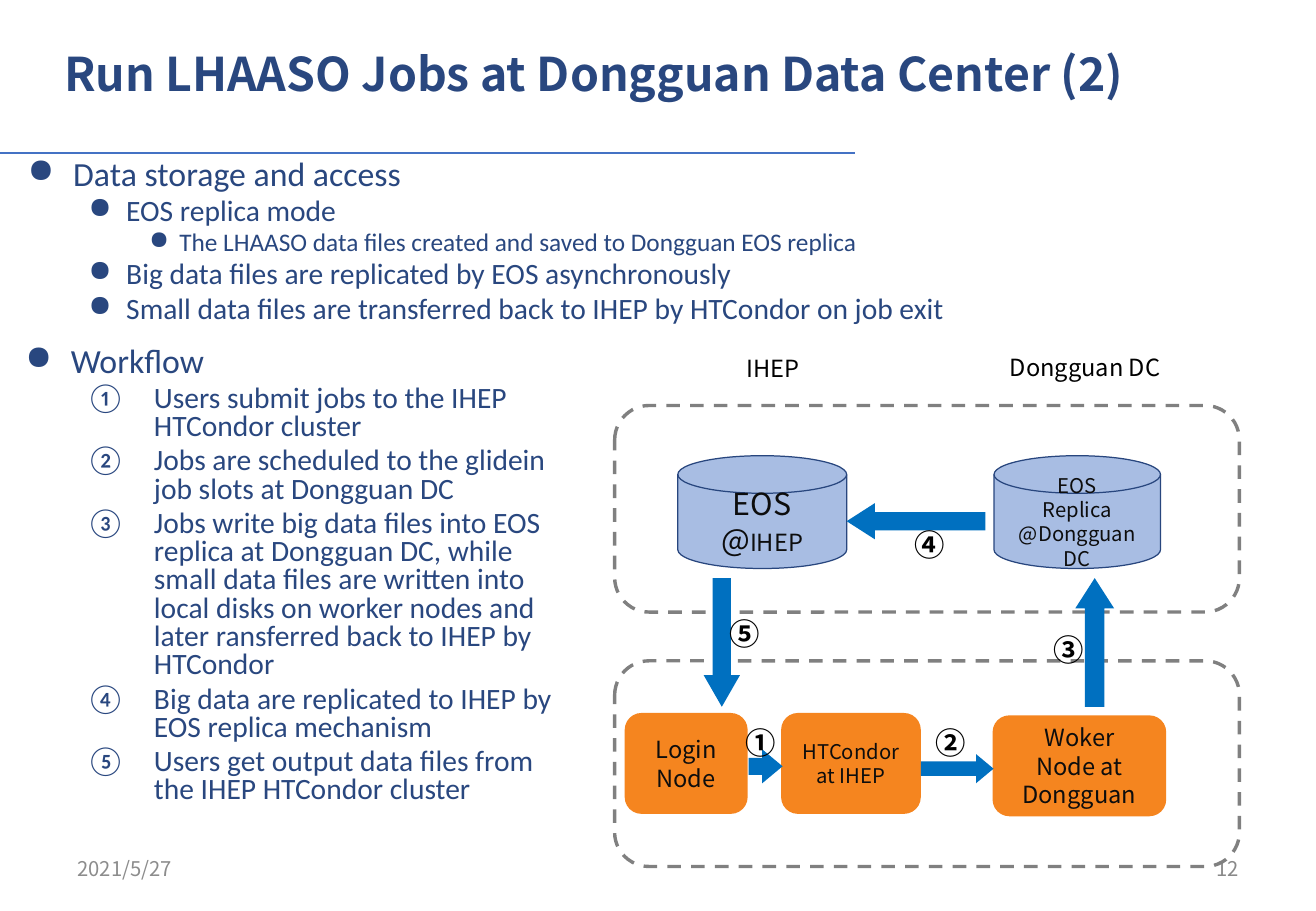
from dataclasses import dataclass

from lxml.etree import SubElement
from pptx import Presentation
from pptx.dml.color import RGBColor
from pptx.enum.dml import MSO_LINE
from pptx.enum.shapes import MSO_CONNECTOR, MSO_SHAPE
from pptx.enum.text import MSO_ANCHOR, PP_ALIGN
from pptx.oxml.ns import qn
from pptx.util import Cm, Pt


@dataclass(frozen=True)
class Theme:
    navy: str = "29477F"
    rule: str = "4472C4"
    dash: str = "808080"
    disk: str = "A8BDE3"
    disk_edge: str = "28467E"
    node: str = "F5851F"
    arrow: str = "0070C0"
    ink: str = "0D0D0D"
    black: str = "000000"
    date: str = "8C8C8C"
    number: str = "898989"
    title_font: str = "Noto Sans CJK KR"
    body_font: str = "Calibri"
    label_font: str = "Noto Sans CJK SC"
    title_size: float = 27.5
    level_sizes: tuple = (20, 17.5, 15)
    large: float = 18
    medium: float = 14
    small: float = 12


THEME = Theme()
SLIDE_SIZE = (27.51, 19.05)

# All boxes are (left, top, width, height) in centimetres.
TITLE = "Run LHAASO Jobs at Dongguan Data Center (2)"
TITLE_BOX = (1.09, 0.81, 23.29, 1.8)
RULE_Y, RULE_END = 3.2, 17.88

# Outline items: (level, text)
STORAGE_BOX = (0.33, 3.23, 27.1, 3.91)
STORAGE = [
    (0, "Data storage and access"),
    (1, "EOS replica mode"),
    (2, "The LHAASO data files created and saved to Dongguan EOS replica"),
    (1, "Big data files are replicated by EOS asynchronously"),
    (1, "Small data files are transferred back to IHEP by HTCondor on job exit"),
]
STORAGE_INDENTS = [(0.95, 0.95), (2.06, 0.79), (3.17, 0.63)]

WORKFLOW_BOX = (0.28, 7.14, 11.71, 10.64)
WORKFLOW = [
    (0, "Workflow"),
    (1, "Users submit jobs to the IHEP HTCondor cluster"),
    (1, "Jobs are scheduled to the glidein job slots at Dongguan DC"),
    (1, "Jobs write big data files into EOS replica at Dongguan DC, while small data files "
        "are written into local disks on worker nodes and later ransferred back to IHEP by HTCondor"),
    (1, "Big data are replicated to IHEP by EOS replica mechanism"),
    (1, "Users get output data files from the IHEP HTCondor cluster"),
]
WORKFLOW_INDENTS = [(0.95, 0.95), (2.69, 1.42)]

FOOTERS = [
    ("2021/5/27", 1.37, PP_ALIGN.LEFT, THEME.date),
    ("12", 19.71, PP_ALIGN.RIGHT, THEME.number),
]
FOOTER_TOP, FOOTER_WIDTH, FOOTER_HEIGHT = 17.65, 6.43, 1.02

FRAMES = [(12.85, 8.48, 13.06, 4.32), (12.85, 13.82, 13.06, 4.3)]
SITES = [
    ("IHEP", (14.17, 7.14, 3.99, 1.12)),
    ("Dongguan DC", (20.07, 7.11, 5.23, 1.12)),
]

# Paragraphs are lists of (text, size) runs.
DISKS = [
    ((14.17, 9.53, 3.53, 2.36),
     [[("EOS", THEME.large)], [("@", THEME.large), ("IHEP", THEME.medium)]]),
    ((20.78, 9.53, 3.48, 2.36),
     [[("EOS", THEME.small)], [("Replica @Dongguan DC", THEME.small)]]),
]
NODES = [
    ((13.06, 14.91, 2.57, 2.11), [[("Login", THEME.medium)], [("Node", THEME.medium)]]),
    ((16.33, 14.91, 2.92, 2.11), [[("HTCondor at IHEP", THEME.small)]]),
    ((20.75, 14.96, 3.63, 2.11),
     [[("Woker", THEME.medium)], [("Node at Dongguan", THEME.medium)]]),
]

# Steps: (number, number centre, arrow shape, arrow box, head length ratio)
STEPS = [
    ("①", (15.91, 15.53), MSO_SHAPE.RIGHT_ARROW, (15.65, 15.67, 0.71, 0.71), 0.6),
    ("②", (19.88, 15.53), MSO_SHAPE.RIGHT_ARROW, (19.25, 15.77, 1.52, 0.61), 0.6),
    ("③", (22.34, 13.58), MSO_SHAPE.UP_ARROW, (22.48, 12.09, 0.81, 2.69), 0.78),
    ("④", (19.44, 11.39), MSO_SHAPE.LEFT_ARROW, (17.7, 10.52, 2.9, 0.76), 0.78),
    ("⑤", (15.56, 13.25), MSO_SHAPE.DOWN_ARROW, (14.71, 12.09, 0.76, 2.69), 0.87),
]
NUMBER_WIDTH, NUMBER_HEIGHT = 1.24, 1.2


def color(value):
    return RGBColor.from_string(value)


def add_span(para, text, size, font, ink, bold=False):
    span = para.add_run()
    span.text = text
    span.font.size = Pt(size)
    span.font.bold = bold
    span.font.color.rgb = color(ink)
    span.font.name = font
    SubElement(span.font._element, qn("a:ea"), typeface=font)


def write(box, paragraphs, font, ink, align=PP_ALIGN.CENTER, anchor=MSO_ANCHOR.MIDDLE, bold=False):
    frame = box.text_frame
    frame.word_wrap = True
    frame.vertical_anchor = anchor
    for index, spans in enumerate(paragraphs):
        para = frame.add_paragraph() if index else frame.paragraphs[0]
        para.alignment = align
        for text, size in spans:
            add_span(para, text, size, font, ink, bold)


def add_box(page, place):
    return page.shapes.add_textbox(*map(Cm, place))


def add_figure(page, kind, place, fill=None, edge=None, width=0.75):
    shape = page.shapes.add_shape(kind, *map(Cm, place))
    shape.shadow.inherit = False
    if fill:
        shape.fill.solid()
        shape.fill.fore_color.rgb = color(fill)
    else:
        shape.fill.background()
    if edge:
        shape.line.color.rgb = color(edge)
        shape.line.width = Pt(width)
    else:
        shape.line.fill.background()
    return shape


def add_outline(page, place, items, indents, numbered=False):
    """Bulleted list; with numbered, the second level gets circled numbers."""
    frame = add_box(page, place).text_frame
    frame.word_wrap = True
    for index, (level, text) in enumerate(items):
        para = frame.add_paragraph() if index else frame.paragraphs[0]
        size = THEME.level_sizes[level]
        margin, hanging = indents[level]
        para.level = level
        para.line_spacing = 0.8
        para.space_before = Pt(size * 0.2 if index else 0)
        properties = para._p.get_or_add_pPr()
        properties.set("marL", str(Cm(margin)))
        properties.set("indent", str(-Cm(hanging)))
        if numbered and level:
            SubElement(properties, qn("a:buAutoNum"), type="circleNumDbPlain")
        else:
            SubElement(properties, qn("a:buChar"), char="●")
        add_span(para, text, size, THEME.body_font, THEME.navy)


def add_text_parts(page):
    rule = page.shapes.add_connector(
        MSO_CONNECTOR.STRAIGHT, Cm(0), Cm(RULE_Y), Cm(RULE_END), Cm(RULE_Y))
    rule.line.color.rgb = color(THEME.rule)
    rule.line.width = Pt(1.25)
    SubElement(rule._element.spPr, qn("a:effectLst"))

    write(add_box(page, TITLE_BOX), [[(TITLE, THEME.title_size)]], THEME.title_font,
          THEME.navy, PP_ALIGN.LEFT, MSO_ANCHOR.TOP, bold=True)
    add_outline(page, STORAGE_BOX, STORAGE, STORAGE_INDENTS)
    for text, left, align, ink in FOOTERS:
        box = add_box(page, (left, FOOTER_TOP, FOOTER_WIDTH, FOOTER_HEIGHT))
        write(box, [[(text, THEME.small)]], THEME.label_font, ink, align)
    add_outline(page, WORKFLOW_BOX, WORKFLOW, WORKFLOW_INDENTS, numbered=True)


def add_diagram(page):
    for place in FRAMES:
        frame = add_figure(page, MSO_SHAPE.ROUNDED_RECTANGLE, place, edge=THEME.dash, width=2)
        frame.line.dash_style = MSO_LINE.DASH
    for text, place in SITES:
        write(add_box(page, place), [[(text, THEME.medium)]], THEME.label_font, THEME.black)
    for place, paragraphs in DISKS:
        disk = add_figure(page, MSO_SHAPE.FLOWCHART_MAGNETIC_DISK, place,
                          THEME.disk, THEME.disk_edge)
        write(disk, paragraphs, THEME.label_font, THEME.ink)
    for place, paragraphs in NODES:
        node = add_figure(page, MSO_SHAPE.ROUNDED_RECTANGLE, place, THEME.node)
        write(node, paragraphs, THEME.label_font, THEME.ink)
    for _, _, kind, place, head in STEPS:
        arrow = add_figure(page, kind, place, THEME.arrow)
        arrow.adjustments[0] = 0.5
        arrow.adjustments[1] = head
    for number, (x, y), _, _, _ in STEPS:
        box = add_box(page, (x - NUMBER_WIDTH / 2, y - NUMBER_HEIGHT / 2,
                             NUMBER_WIDTH, NUMBER_HEIGHT))
        write(box, [[(number, THEME.large)]], THEME.label_font, THEME.black, bold=True)


def main():
    deck = Presentation()
    deck.slide_width, deck.slide_height = map(Cm, SLIDE_SIZE)
    page = deck.slides.add_slide(deck.slide_layouts[6])
    add_text_parts(page)
    add_diagram(page)
    deck.save("out.pptx")


if __name__ == "__main__":
    main()
